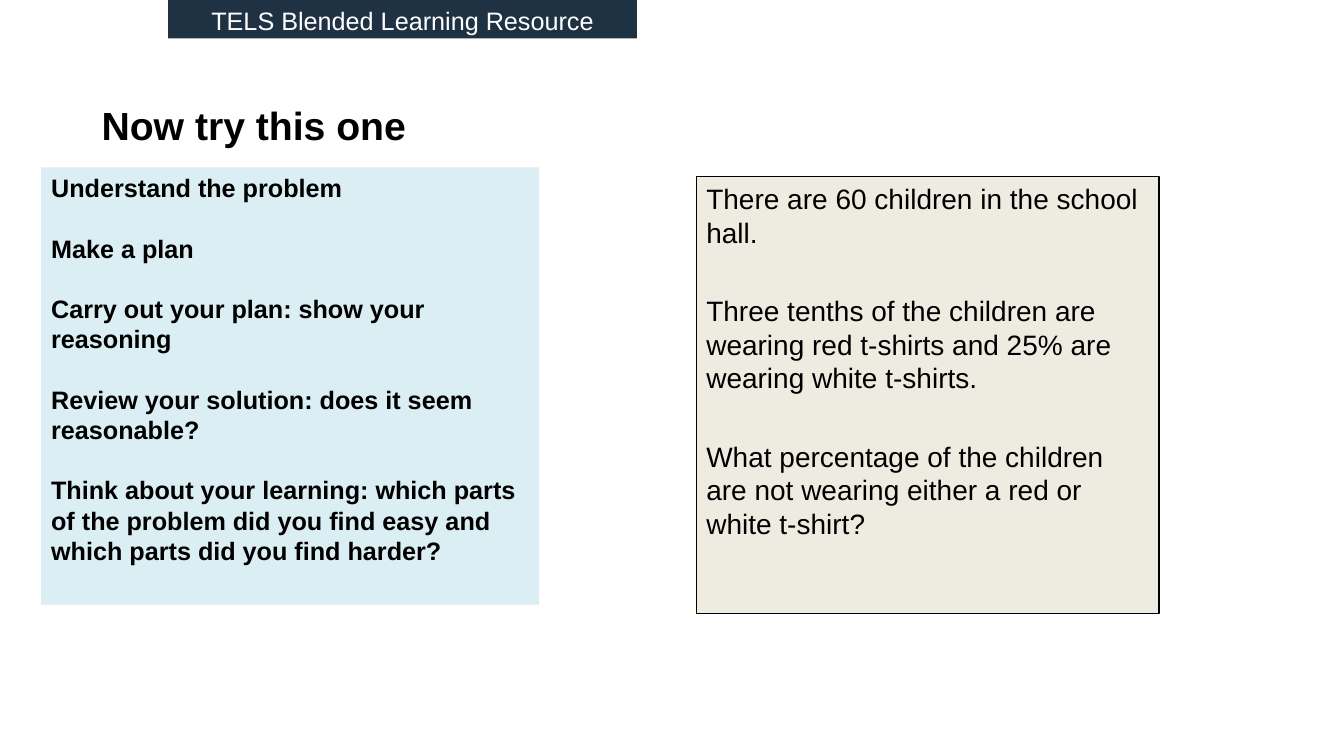
from pptx import Presentation
from pptx.dml.color import RGBColor
from pptx.enum.shapes import MSO_SHAPE
from pptx.enum.text import MSO_ANCHOR, PP_ALIGN
from pptx.util import Cm, Pt

RECTANGLE = MSO_SHAPE.RECTANGLE
TOP, MIDDLE = MSO_ANCHOR.TOP, MSO_ANCHOR.MIDDLE
LEFT, CENTER = PP_ALIGN.LEFT, PP_ALIGN.CENTER

BLACK = RGBColor(0x00, 0x00, 0x00)
WHITE = RGBColor(0xFF, 0xFF, 0xFF)
NAVY = RGBColor(0x1F, 0x32, 0x44)
PALE_BLUE = RGBColor(0xDB, 0xEE, 0xF4)
CREAM = RGBColor(0xEE, 0xEC, 0xE1)

prs = Presentation()
prs.slide_width, prs.slide_height = Cm(33.87), Cm(19.05)
slide = prs.slides.add_slide(prs.slide_layouts[6])


def add_panel(text, left, top, width, height, fill=None, line=None, size=18,
              bold=False, color=BLACK, align=LEFT, anchor=TOP, gap=0):
    """Add a box of text, one paragraph per line, with a gap between them."""
    place = Cm(left), Cm(top), Cm(width), Cm(height)
    if fill is None:
        panel = slide.shapes.add_textbox(*place)
    else:
        panel = slide.shapes.add_shape(RECTANGLE, *place)
        panel.shadow.inherit = False
        panel.fill.solid()
        panel.fill.fore_color.rgb = fill
        if line is None:
            panel.line.fill.background()
        else:
            panel.line.color.rgb = line
            panel.line.width = Pt(0.75)
    frame = panel.text_frame
    frame.word_wrap = True
    frame.vertical_anchor = anchor
    frame.text = text
    for index, paragraph in enumerate(frame.paragraphs):
        paragraph.alignment = align
        paragraph.space_before = Pt(gap if index else 0)
        font = paragraph.font
        font.name, font.size, font.bold = "Arial", Pt(size), bold
        font.color.rgb = color


# Heading
add_panel("Now try this one", 2.31, 2.34, 22.86, 1.63,
          size=28, bold=True, anchor=MIDDLE)

# Problem-solving steps
steps = [
    "Understand the problem",
    "Make a plan",
    "Carry out your plan: show your reasoning",
    "Review your solution: does it seem reasonable?",
    "Think about your learning: which parts of the problem did you find easy "
    "and which parts did you find harder?",
]
add_panel("\n".join(steps), 1.04, 4.22, 12.55, 11.02,
          fill=PALE_BLUE, bold=True, gap=21.6)

# Banner
add_panel("TELS Blended Learning Resource", 4.24, 0, 11.81, 0.97,
          fill=NAVY, color=WHITE, align=CENTER)

# Word problem
problem = [
    "There are 60 children in the school hall.",
    "Three tenths of the children are wearing red t-shirts and 25% are "
    "wearing white t-shirts.",
    "What percentage of the children are not wearing either a red or "
    "white t-shirt?",
]
add_panel("\n".join(problem), 17.55, 4.45, 11.66, 11.02,
          fill=CREAM, line=BLACK, size=20, gap=32)

prs.save("out.pptx")
